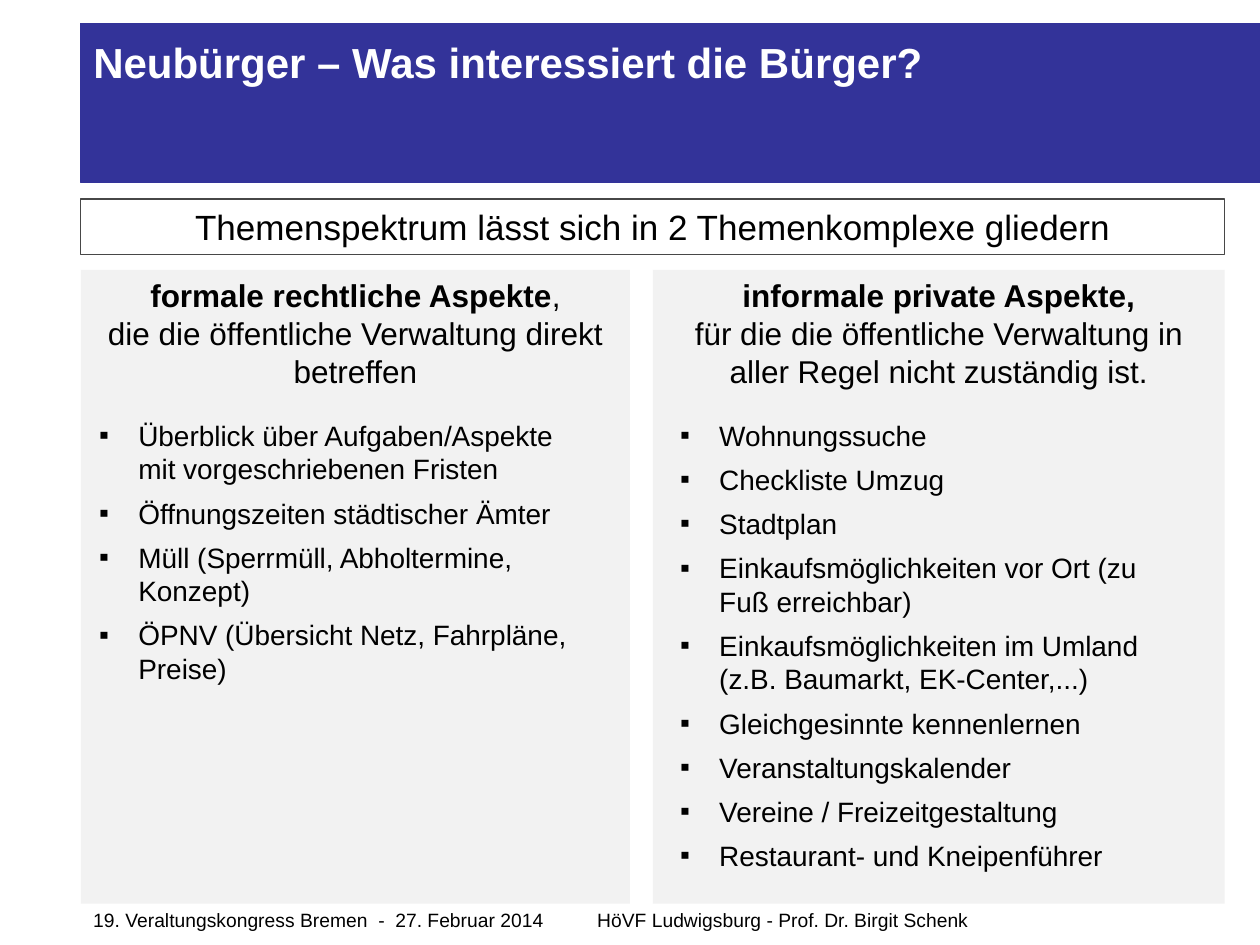
from dataclasses import dataclass

from lxml import etree
from pptx import Presentation
from pptx import util as u
from pptx.dml.color import RGBColor
from pptx.enum import shapes, text
from pptx.oxml.ns import qn


@dataclass(frozen=True)
class Theme:
    font: str = "Arial"
    blue: str = "333399"
    white: str = "FFFFFF"
    black: str = "000000"
    panel: str = "F2F2F2"
    border: str = "474747"
    title: int = 24
    lead: int = 20
    heading: int = 18
    bullet: int = 16
    footer: int = 11


theme = Theme()
LEFT, WIDTH = 1.63, 23.06
PANEL_TOP, PANEL_HEIGHT = 5.44, 12.78
INDENT = u.Cm(0.79)


def add_run(paragraph, words, size, color=theme.black, bold=False):
    run = paragraph.add_run()
    run.text = words
    run.font.name = theme.font
    run.font.size = u.Pt(size)
    run.font.bold = bold
    run.font.color.rgb = RGBColor.from_string(color)


def add_box(left, top, width, height, fill, line=None):
    box = slide.shapes.add_shape(shapes.MSO_SHAPE.RECTANGLE, u.Cm(left), u.Cm(top),
                                 u.Cm(width), u.Cm(height))
    box.shadow.inherit = False
    box.fill.solid()
    box.fill.fore_color.rgb = RGBColor.from_string(fill)
    if line:
        box.line.color.rgb = RGBColor.from_string(line)
        box.line.width = u.Pt(0.75)
    else:
        box.line.fill.background()
    box.text_frame.word_wrap = True
    box.text_frame.vertical_anchor = text.MSO_ANCHOR.TOP
    box.text_frame.paragraphs[0].alignment = text.PP_ALIGN.CENTER
    return box


prs = Presentation()
prs.slide_width, prs.slide_height = u.Cm(25.4), u.Cm(19.05)
slide = prs.slides.add_slide(prs.slide_layouts[5])

# Title on its blue band
add_box(LEFT, 0.48, 23.77, 3.2, theme.blue, theme.blue)
title = slide.shapes.title
slide.shapes._spTree.append(title._element)  # bring in front of the band
title.left, title.top = u.Cm(1.88), u.Cm(0.74)
title.width, title.height = u.Cm(22.68), u.Cm(2.95)
heading = title.text_frame
heading.margin_left = heading.margin_right = heading.margin_top = heading.margin_bottom = 0
heading.auto_size = text.MSO_AUTO_SIZE.NONE
heading.vertical_anchor = text.MSO_ANCHOR.TOP
heading.paragraphs[0].alignment = text.PP_ALIGN.LEFT
add_run(heading.paragraphs[0], "Neubürger – Was interessiert die Bürger?",
        theme.title, theme.white, True)

# Lead statement
lead = add_box(LEFT, 4.01, WIDTH, 1.12, theme.white, theme.border)
add_run(lead.text_frame.paragraphs[0],
        "Themenspektrum lässt sich in 2 Themenkomplexe gliedern", theme.lead)

# Two topic groups: panel left and width, list left and width, heading runs, topics
groups = [
    (LEFT, 11.07, 1.75, 10.24,
     "formale rechtliche Aspekte", ",",
     "die die öffentliche Verwaltung direkt betreffen",
     ["Überblick über Aufgaben/Aspekte mit vorgeschriebenen Fristen",
      "Öffnungszeiten städtischer Ämter",
      "Müll (Sperrmüll, Abholtermine, Konzept)",
      "ÖPNV (Übersicht Netz, Fahrpläne, Preise)"]),
    (13.16, 11.53, 13.46, 10.36,
     "informale private Aspekte,", "",
     "für die die öffentliche Verwaltung in aller Regel nicht zuständig ist.",
     ["Wohnungssuche",
      "Checkliste Umzug",
      "Stadtplan",
      "Einkaufsmöglichkeiten vor Ort (zu Fuß erreichbar)",
      "Einkaufsmöglichkeiten im Umland (z.B. Baumarkt, EK-Center,...)",
      "Gleichgesinnte kennenlernen",
      "Veranstaltungskalender",
      "Vereine / Freizeitgestaltung",
      "Restaurant- und Kneipenführer"]),
]
for left, width, list_left, list_width, aspect, comma, scope, topics in groups:
    panel = add_box(left, PANEL_TOP, width, PANEL_HEIGHT, theme.panel)
    intro = panel.text_frame.paragraphs[0]
    add_run(intro, aspect, theme.heading, bold=True)
    if comma:
        add_run(intro, comma, theme.heading)
    intro.add_line_break()
    add_run(intro, scope, theme.heading)

    topic_list = slide.shapes.add_textbox(u.Cm(list_left), u.Cm(8.31), u.Cm(list_width),
                                          u.Cm(5.69 if len(topics) == 4 else 9.5)).text_frame
    topic_list.word_wrap = True
    for number, topic in enumerate(topics):
        entry = topic_list.add_paragraph() if number else topic_list.paragraphs[0]
        entry.space_after = u.Pt(6)
        props = entry._p.get_or_add_pPr()
        props.set("marL", str(INDENT))
        props.set("indent", str(-INDENT))
        etree.SubElement(props, qn("a:buFont"), typeface=theme.font)
        etree.SubElement(props, qn("a:buChar"), char="▪")
        add_run(entry, topic, theme.bullet)

# Footer with the speaker at a tab stop
footer = slide.shapes.add_textbox(u.Cm(LEFT), u.Cm(18.19), u.Cm(WIDTH), u.Cm(0.74)).text_frame
footer.word_wrap = True
event = footer.paragraphs[0]
tabs = etree.SubElement(event._p.get_or_add_pPr(), qn("a:tabLst"))
etree.SubElement(tabs, qn("a:tab"), pos=str(u.Cm(10.16)), algn="l")
add_run(event, "19. Veraltungskongress Bremen  -  27. Februar 2014\t"
               "HöVF Ludwigsburg - Prof. Dr. Birgit Schenk", theme.footer)

prs.save("out.pptx")
